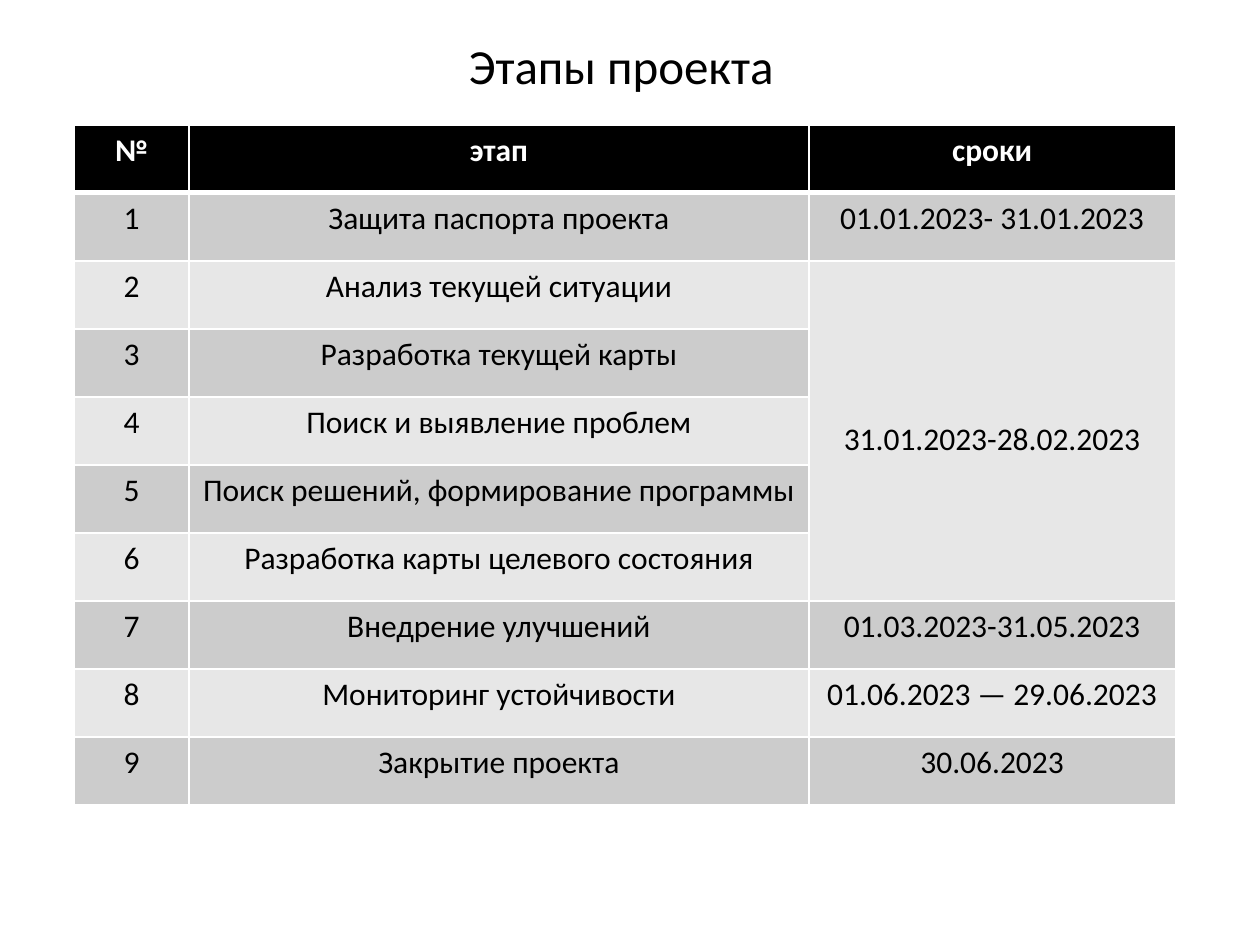
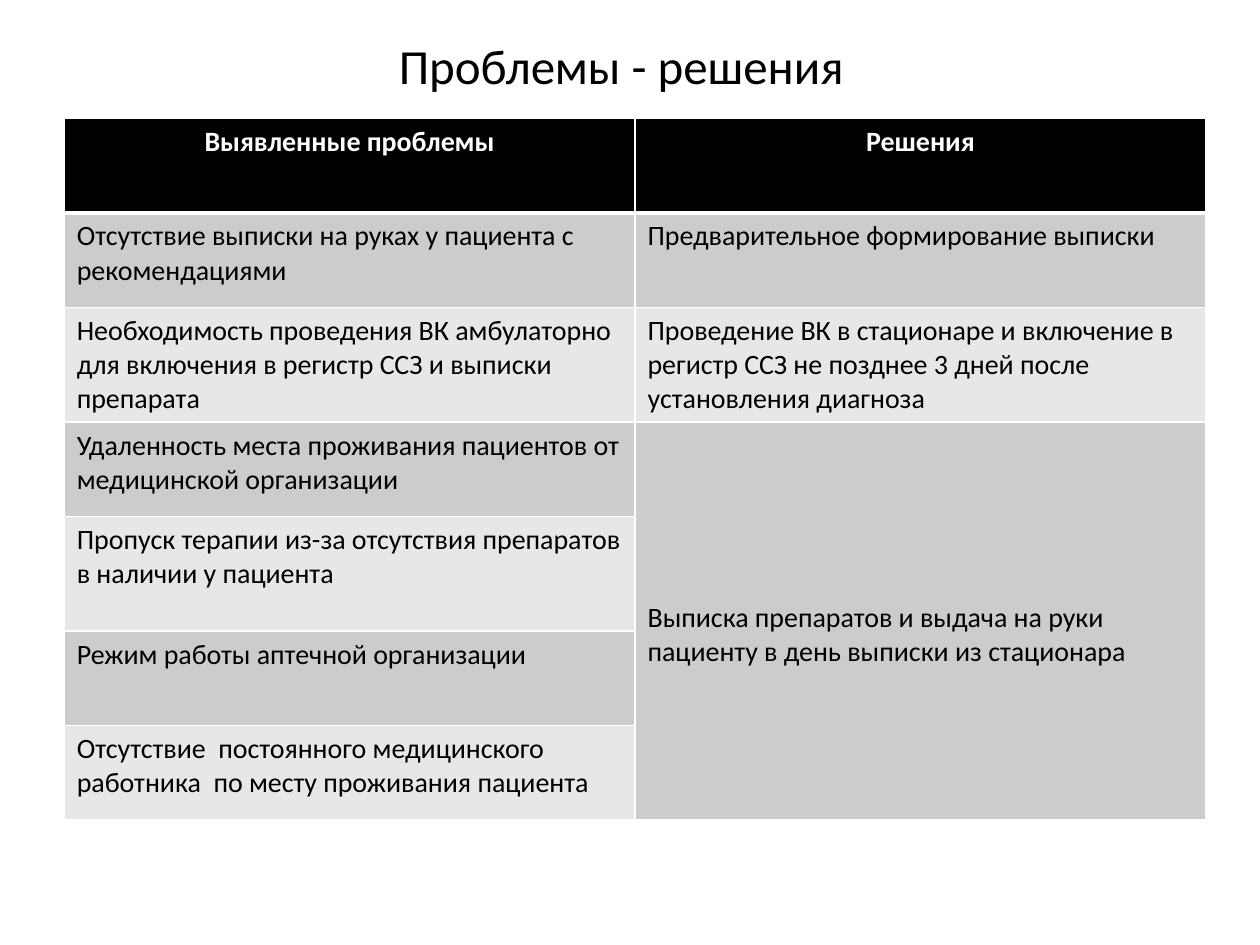
from lxml.etree import SubElement
from pptx import Presentation
from pptx.dml.color import RGBColor
from pptx.enum.text import MSO_ANCHOR, PP_ALIGN
from pptx.oxml.ns import qn
from pptx.util import Inches, Pt

BLACK = RGBColor(0x00, 0x00, 0x00)
WHITE = RGBColor(0xFF, 0xFF, 0xFF)
DARK_BAND = RGBColor(0xCC, 0xCC, 0xCC)
LIGHT_BAND = RGBColor(0xE7, 0xE7, 0xE7)
FONT = "Calibri"
TITLE_SIZE = 28
TITLE_BOX = (0.43, 0.21, 9, 0.61)
THIN, THICK = 1, 3

# None continues the cell above; "drop" is the extra top margin of merged cells.
SLIDES = [
    {
        "title": "Этапы проекта",
        "origin": (0.59, 0.99),
        "columns": [0.91, 4.92, 2.91],
        "row_heights": [0.54] * 10,
        "size": 18,
        "align": PP_ALIGN.CENTER,
        "drop": 0.14,
        "rows": [
            ("№", "этап", "сроки"),
            ("1", "Защита паспорта проекта", "01.01.2023- 31.01.2023"),
            ("2", "Анализ текущей ситуации", "31.01.2023-28.02.2023"),
            ("3", "Разработка текущей карты", None),
            ("4", "Поиск и выявление проблем", None),
            ("5", "Поиск решений, формирование программы", None),
            ("6", "Разработка карты целевого состояния", None),
            ("7", "Внедрение улучшений", "01.03.2023-31.05.2023"),
            ("8", "Мониторинг устойчивости", "01.06.2023 — 29.06.2023"),
            ("9", "Закрытие проекта", "30.06.2023"),
        ],
    },
    {
        "title": "Проблемы - решения",
        "origin": (0.51, 0.94),
        "columns": [4.53, 4.53],
        "row_heights": [0.75, 0.75, 0.91, 0.75, 0.91, 0.75, 0.75],
        "size": 16,
        "align": PP_ALIGN.LEFT,
        "drop": 0.22,
        "rows": [
            ("Выявленные проблемы", "Решения"),
            ("Отсутствие выписки на руках у пациента с рекомендациями",
             "Предварительное формирование выписки"),
            ("Необходимость проведения ВК амбулаторно для включения в регистр ССЗ и выписки препарата",
             "Проведение ВК в стационаре и включение в регистр ССЗ не позднее 3 дней после "
             "установления диагноза"),
            ("Удаленность места проживания пациентов от медицинской организации",
             "Выписка препаратов и выдача на руки пациенту в день выписки из стационара"),
            ("Пропуск терапии из-за отсутствия препаратов в наличии у пациента", None),
            ("Режим работы аптечной организации", None),
            ("Отсутствие  постоянного медицинского работника  по месту проживания пациента", None),
        ],
    },
]


def write(text_frame, text, size, color, align, bold=False):
    text_frame.text = text
    paragraph = text_frame.paragraphs[0]
    paragraph.alignment = align
    font = paragraph.runs[0].font
    font.name, font.size, font.bold = FONT, Pt(size), bold
    font.color.rgb = color


def add_title(slide, text):
    box = slide.shapes.add_textbox(*map(Inches, TITLE_BOX))
    box.text_frame.word_wrap = True
    box.text_frame.vertical_anchor = MSO_ANCHOR.MIDDLE
    write(box.text_frame, text, TITLE_SIZE, BLACK, PP_ALIGN.CENTER)


def set_borders(cell, row):
    """White grid with a thick rule between the header and the body."""
    widths = {"L": THIN, "R": THIN,
              "T": THICK if row == 1 else THIN,
              "B": THICK if row == 0 else THIN}
    properties = cell._tc.get_or_add_tcPr()
    for side, width in widths.items():
        line = SubElement(properties, qn(f"a:ln{side}"), w=str(Pt(width)))
        fill = SubElement(line, qn("a:solidFill"))
        SubElement(fill, qn("a:srgbClr"), val=str(WHITE))


def span_below(rows, row, column):
    """Number of rows that the cell covers."""
    end = row + 1
    while end < len(rows) and rows[end][column] is None:
        end += 1
    return end - row


def add_grid(slide, content):
    rows, columns, heights = content["rows"], content["columns"], content["row_heights"]
    frame = slide.shapes.add_table(
        len(rows), len(columns), *map(Inches, content["origin"]),
        Inches(sum(columns)), Inches(sum(heights)))
    table = frame.table
    for column, width in zip(table.columns, columns):
        column.width = Inches(width)
    for table_row, height in zip(table.rows, heights):
        table_row.height = Inches(height)

    for row, texts in enumerate(rows):
        header = row == 0
        band = BLACK if header else (DARK_BAND if row % 2 else LIGHT_BAND)
        for column, text in enumerate(texts):
            cell = table.cell(row, column)
            set_borders(cell, row)
            cell.fill.solid()
            cell.fill.fore_color.rgb = band
            if text is None:
                continue
            write(cell.text_frame, text, content["size"],
                  WHITE if header else BLACK,
                  PP_ALIGN.CENTER if header else content["align"], header)
            span = span_below(rows, row, column)
            if span > 1:
                cell.merge(table.cell(row + span - 1, column))
                cell.vertical_anchor = MSO_ANCHOR.MIDDLE
                cell.margin_top = Inches(0.05 + content["drop"])


def main():
    presentation = Presentation()
    presentation.slide_width, presentation.slide_height = Inches(10), Inches(7.5)
    for content in SLIDES:
        slide = presentation.slides.add_slide(presentation.slide_layouts[6])
        add_title(slide, content["title"])
        add_grid(slide, content)
    presentation.save("out.pptx")


if __name__ == "__main__":
    main()
